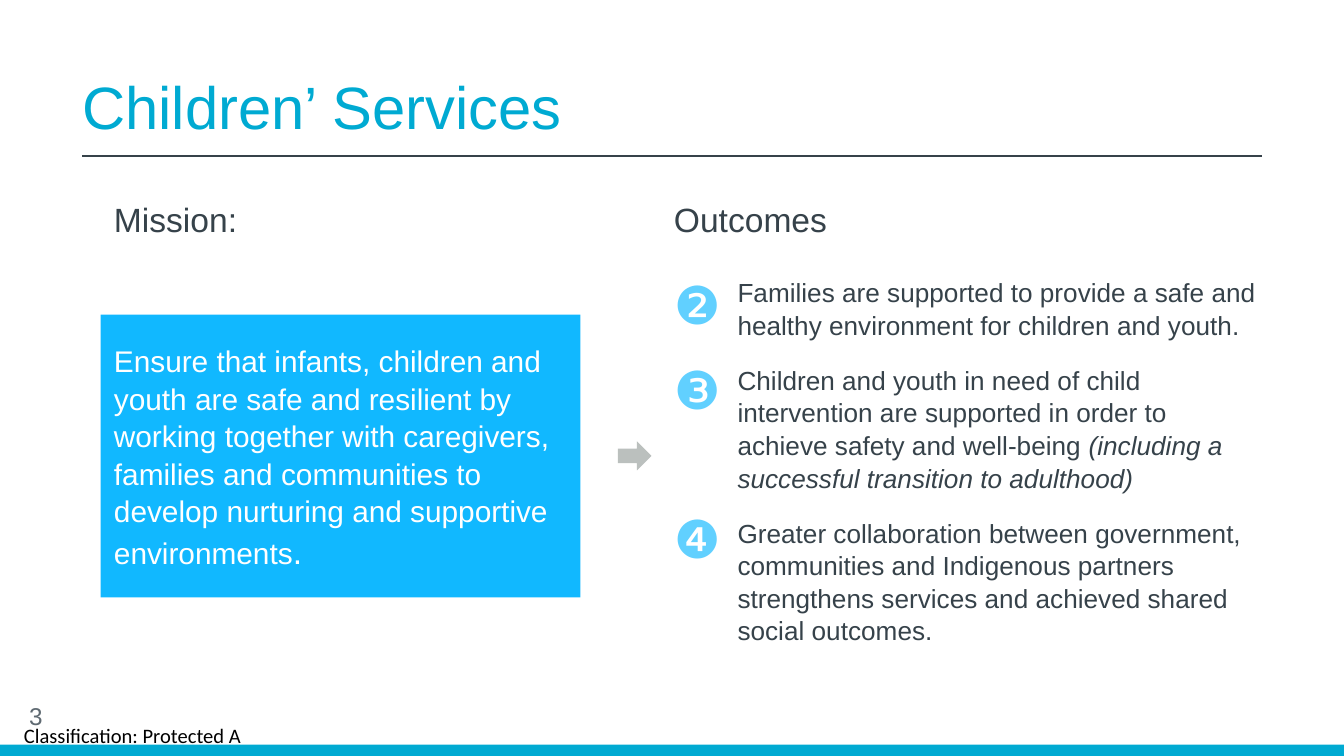
from lxml import etree
from pptx import Presentation
from pptx.dml.color import RGBColor
from pptx.enum.shapes import MSO_CONNECTOR, MSO_SHAPE
from pptx.enum.text import MSO_ANCHOR, PP_ALIGN
from pptx.oxml.ns import qn
from pptx.util import Pt

RECTANGLE, ARROW = MSO_SHAPE.RECTANGLE, MSO_SHAPE.RIGHT_ARROW
STRAIGHT = MSO_CONNECTOR.STRAIGHT
TOP, MIDDLE, BOTTOM = MSO_ANCHOR.TOP, MSO_ANCHOR.MIDDLE, MSO_ANCHOR.BOTTOM
LEFT, CENTER = PP_ALIGN.LEFT, PP_ALIGN.CENTER

TEAL, SLATE, BLUE = "00AAD2", "36424A", "11B8FF"
HEADING = {"size": 18, "color": SLATE}
NUMERAL = {"size": 28, "color": "61D0FF"}
BODY = {"size": 14, "color": SLATE}
MISSION = {"size": 16, "color": "FFFFFF"}

# Each outcome: its runs as (text, extra format)
OUTCOMES = [
    [("Families are supported to provide a safe and healthy environment "
      "for children and youth.", {})],
    [("Children and youth in need of child intervention are supported in "
      "order to achieve safety and well-being ", {}),
     ("(including a successful transition to adulthood)", {"italic": True})],
    [("Greater collaboration between government, communities and Indigenous "
      "partners strengthens services and achieved shared social outcomes.", {})],
]
NUMERALS = [("❷", 142.5), ("❸", 188), ("❹", 267.5)]


def rgb(color):
    return RGBColor.from_string(color)


def set_font(font, size, color, name="Arial", italic=False):
    values = {"size": Pt(size), "name": name, "italic": italic}
    for key, value in values.items():
        setattr(font, key, value)
    font.color.rgb = rgb(color)


def write(shape, paragraphs, style, anchor=TOP, align=LEFT, gap=0, line=1.0):
    """Fill a shape with paragraphs, each a list of (text, extra format)."""
    frame = shape.text_frame
    frame.word_wrap = True
    frame.vertical_anchor = anchor
    for index, runs in enumerate(paragraphs):
        para = frame.add_paragraph() if index else frame.paragraphs[0]
        para.alignment = align
        para.line_spacing = line
        if index:
            para.space_before = Pt(gap)
        for text, extra in runs:
            span = para.add_run()
            span.text = text
            set_font(span.font, **{**style, **extra})


def add_text(slide, bounds, paragraphs, style, **layout):
    box = slide.shapes.add_textbox(*map(Pt, bounds))
    write(box, paragraphs, style, **layout)
    return box


def add_label(slide, bounds, text, style, **layout):
    return add_text(slide, bounds, [[(text, {})]], style, **layout)


def add_block(slide, kind, bounds, color):
    block = slide.shapes.add_shape(kind, *map(Pt, bounds))
    block.shadow.inherit = False
    block.fill.solid()
    block.fill.fore_color.rgb = rgb(color)
    block.line.fill.background()
    return block


def add_rule(slide, start, end, color, width):
    rule = slide.shapes.add_connector(STRAIGHT, *map(Pt, start + end))
    rule.line.color.rgb = rgb(color)
    rule.line.width = Pt(width)
    etree.SubElement(rule._element.spPr, qn("a:effectLst"))


def main():
    deck = Presentation()
    deck.slide_width, deck.slide_height = Pt(720), Pt(405)
    slide = deck.slides.add_slide(deck.slide_layouts[6])

    # Footer
    add_block(slide, RECTANGLE, (0, 399, 720, 6), TEAL)
    footer = add_label(slide, (0, 383, 142, 22), "Classification: Protected A",
                       {"size": 11, "color": "000000", "name": "Calibri"},
                       anchor=MIDDLE, align=CENTER)
    for side in ("left", "right", "top", "bottom"):
        setattr(footer.text_frame, f"margin_{side}", 0)
    add_label(slide, (8.5, 372.5, 162, 21.5), "3",
              {"size": 13, "color": "5F6A72"}, anchor=MIDDLE)

    # Title and rule
    add_label(slide, (37, 34.5, 647, 45), "Children’ Services",
              {"size": 32, "color": TEAL}, anchor=BOTTOM)
    add_rule(slide, (44, 83.5), (676, 83.5), SLATE, 0.75)

    # Mission
    add_label(slide, (54, 103, 210, 29), "Mission:", HEADING)
    mission = add_block(slide, RECTANGLE, (54, 168.5, 257, 151.5), BLUE)
    write(mission, [[("Ensure that infants, children and youth are safe and "
                      "resilient by working together with caregivers, families "
                      "and communities to develop nurturing and supportive "
                      "environments", {}), (".", {"size": 18})]],
          MISSION, anchor=MIDDLE, line=1.05)
    add_block(slide, ARROW, (331, 236.5, 18, 15.5), "BBC0BE")

    # Outcomes
    add_label(slide, (354, 103, 136, 29), "Outcomes", HEADING)
    add_text(slide, (388, 144, 294.5, 200), OUTCOMES, BODY, gap=12, line=1.04)
    for numeral, top in NUMERALS:
        add_label(slide, (354, top, 78, 41), numeral, NUMERAL)

    deck.save("out.pptx")


if __name__ == "__main__":
    main()
